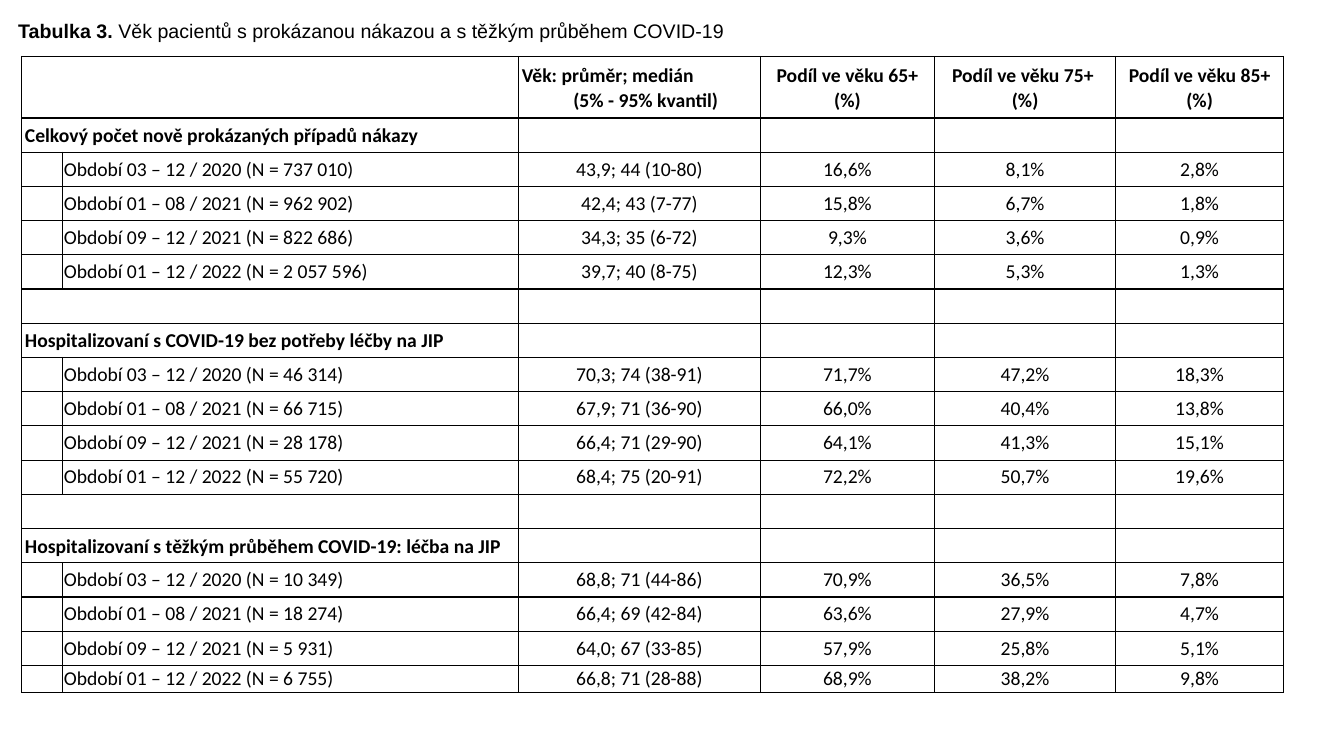
from dataclasses import dataclass

from lxml.etree import SubElement
from pptx import Presentation
from pptx.dml.color import RGBColor
from pptx.enum.text import MSO_ANCHOR, MSO_AUTO_SIZE, PP_ALIGN
from pptx.oxml import parse_xml
from pptx.oxml.ns import qn
from pptx.util import Pt

DRAWING = "http://schemas.openxmlformats.org/drawingml/2006/main"


@dataclass(frozen=True)
class Theme:
    ink: str = "000000"
    paper: str = "FFFFFF"
    head: str = "Arial"
    body: str = "Calibri"
    size: float = 14
    rule: float = 1
    tight: float = 0.7
    loose: float = 2.2
    lead: float = 1.07


THEME = Theme()
WIDTHS = (29.3, 325.7, 172.5, 124.6, 129.3, 120)
TALL, ROW, LAST = 44, 24.46, 19.5
SHARES = ("Podíl ve věku 65+ (%)", "Podíl ve věku 75+ \v(%)", "Podíl ve věku 85+ (%)")
PERIODS = ("03 – 12 / 2020", "01 – 08 / 2021", "09 – 12 / 2021", "01 – 12 / 2022")
GROUPS = (
    ("Celkový počet nově prokázaných případů nákazy", (
        ("737 010", "43,9; 44 (10-80)", "16,6%", "8,1%", "2,8%"),
        ("962 902", "42,4; 43 (7-77)", "15,8%", "6,7%", "1,8%"),
        ("822 686", "34,3; 35 (6-72)", "9,3%", "3,6%", "0,9%"),
        ("2 057 596", "39,7; 40 (8-75)", "12,3%", "5,3%", "1,3%"),
    )),
    ("Hospitalizovaní s COVID-19 bez potřeby léčby na JIP", (
        ("46 314", "70,3; 74 (38-91)", "71,7%", "47,2%", "18,3%"),
        ("66 715", "67,9; 71 (36-90)", "66,0%", "40,4%", "13,8%"),
        ("28 178", "66,4; 71 (29-90)", "64,1%", "41,3%", "15,1%"),
        ("55 720", "68,4; 75 (20-91)", "72,2%", "50,7%", "19,6%"),
    )),
    ("Hospitalizovaní s těžkým průběhem COVID-19: léčba na JIP", (
        ("10 349", "68,8; 71 (44-86)", "70,9%", "36,5%", "7,8%"),
        ("18 274", "66,4; 69 (42-84)", "63,6%", "27,9%", "4,7%"),
        ("5 931", "64,0; 67 (33-85)", "57,9%", "25,8%", "5,1%"),
        ("6 755", "66,8; 71 (28-88)", "68,9%", "38,2%", "9,8%"),
    )),
)


def set_font(font, name, bold=None):
    font.name = name
    font.size = Pt(THEME.size)
    font.bold = bold
    font.color.rgb = RGBColor.from_string(THEME.ink)


def add_title(slide, left, top, width, height):
    title = slide.shapes.title
    title.left, title.top = Pt(left), Pt(top)
    title.width, title.height = Pt(width), Pt(height)
    frame = title.text_frame
    frame.auto_size = MSO_AUTO_SIZE.NONE
    frame.vertical_anchor = MSO_ANCHOR.MIDDLE
    para = frame.paragraphs[0]
    para.alignment = PP_ALIGN.LEFT
    para.line_spacing = 0.9
    parts = (
        ("Tabulka 3. ", True),
        ("Věk pacientů s prokázanou nákazou a s těžkým průběhem COVID-19", False),
    )
    for text, bold in parts:
        run = para.add_run()
        run.text = text
        set_font(run.font, THEME.head, bold)


def style_cell(cell, inset):
    """Give a cell its fill, four borders, margins and empty-line size."""
    cell.fill.solid()
    cell.fill.fore_color.rgb = RGBColor.from_string(THEME.paper)
    cell.vertical_anchor = MSO_ANCHOR.MIDDLE
    cell.margin_left = cell.margin_right = Pt(inset)
    cell.margin_top = cell.margin_bottom = Pt(inset)
    props = cell._tc.get_or_add_tcPr()
    for spot, side in enumerate("LRTB"):
        props.insert(spot, parse_xml(
            f'<a:ln{side} xmlns:a="{DRAWING}" w="{Pt(THEME.rule)}"><a:solidFill>'
            f'<a:srgbClr val="{THEME.ink}"/></a:solidFill></a:ln{side}>'))
    if not cell.text:
        para = cell.text_frame.paragraphs[0]
        SubElement(para._p, qn("a:endParaRPr"), sz=str(int(THEME.size * 100)))


def write(cell, text, align, bold=False):
    cell.text = text
    for para in cell.text_frame.paragraphs:
        para.alignment = align
        set_font(para.font, THEME.body, bold)
        if bold:
            para.line_spacing = THEME.lead


def fill_head(table):
    age = table.cell(0, 2)
    write(age, "Věk: průměr; medián\n(5% - 95% kvantil)", PP_ALIGN.CENTER, True)
    first, second = age.text_frame.paragraphs
    first.alignment = PP_ALIGN.LEFT
    second._p.get_or_add_pPr().set("marL", str(Pt(9)))
    for col, text in enumerate(SHARES, 3):
        write(table.cell(0, col), text, PP_ALIGN.CENTER, True)


def fill_group(table, top, name, rows):
    write(table.cell(top, 0), name, PP_ALIGN.LEFT, True)
    for row, (period, (count, *values)) in enumerate(zip(PERIODS, rows), top + 1):
        label = f"Období {period} (N = {count})"
        write(table.cell(row, 1), label, PP_ALIGN.LEFT)
        for col, value in enumerate(values, 2):
            write(table.cell(row, col), value, PP_ALIGN.CENTER)


def add_ages(slide, left, top):
    step = len(PERIODS) + 2
    count = step * len(GROUPS)
    heights = [TALL] + [ROW] * (count - 2) + [LAST]
    table = slide.shapes.add_table(
        count, len(WIDTHS), Pt(left), Pt(top), Pt(sum(WIDTHS)), Pt(sum(heights))
    ).table
    table.first_row = table.horz_banding = False
    for column, width in zip(table.columns, WIDTHS):
        column.width = Pt(width)
    for row, height in zip(table.rows, heights):
        row.height = Pt(height)

    fill_head(table)
    for index, (name, rows) in enumerate(GROUPS):
        start = index * step
        fill_group(table, start + 1, name, rows)
        for row in (start, start + 1):
            table.cell(row, 0).merge(table.cell(row, 1))
    for index, row in enumerate(table.rows):
        inset = THEME.loose if index % step < 2 else THEME.tight
        for cell in row.cells:
            style_cell(cell, inset)


def main():
    deck = Presentation()
    deck.slide_width, deck.slide_height = Pt(960), Pt(540)
    slide = deck.slides.add_slide(deck.slide_layouts[5])
    add_title(slide, 5.8, 0, 952, 45.4)
    add_ages(slide, 15.6, 40.3)
    deck.save("out.pptx")


if __name__ == "__main__":
    main()
